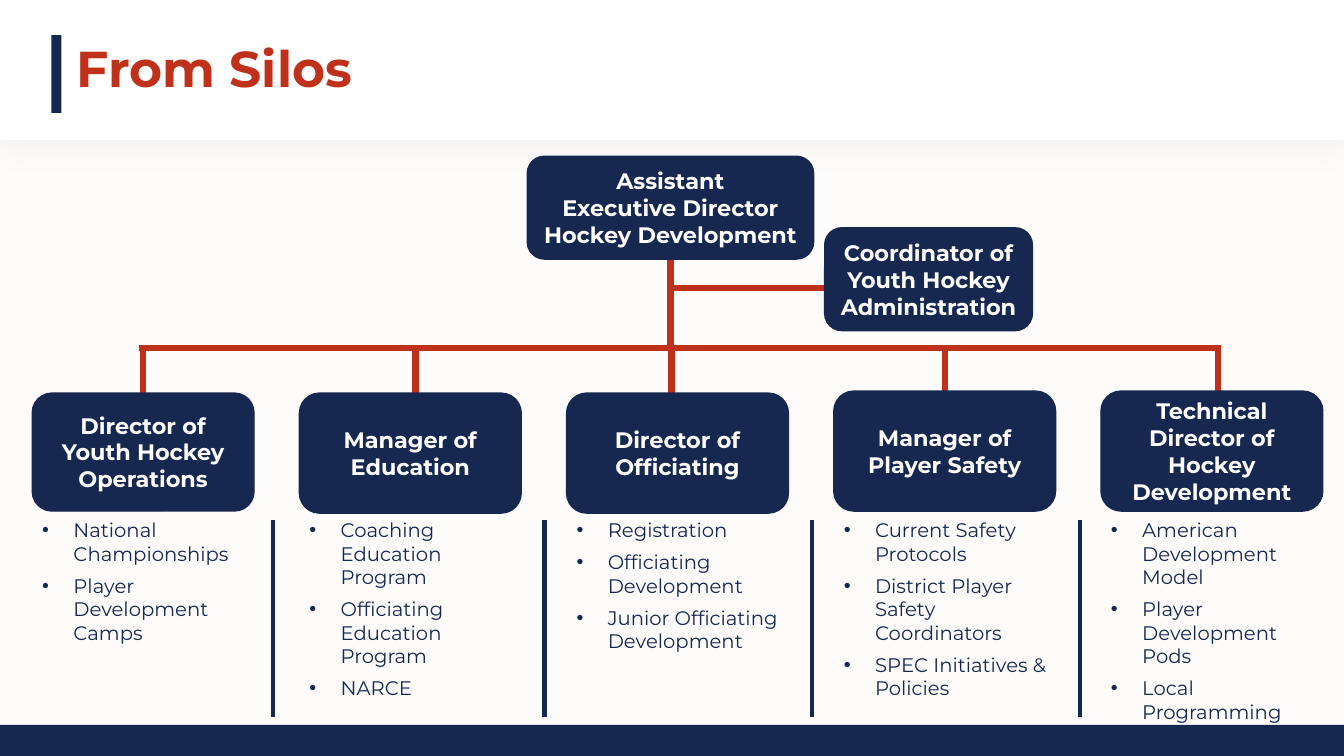
from lxml.etree import SubElement
from pptx import Presentation
from pptx.dml.color import RGBColor
from pptx.enum.shapes import MSO_CONNECTOR, MSO_SHAPE
from pptx.enum.text import MSO_ANCHOR, PP_ALIGN
from pptx.oxml import parse_xml
from pptx.oxml.ns import nsdecls, qn
from pptx.util import Inches, Pt

NAVY, RED, WHITE, CREAM = "162750", "BF311A", "FFFFFF", "FDFCFB"
SLIDE_WIDTH, SLIDE_HEIGHT = 13.33, 7.5

# Grid of the five departments
FIRST_LEFT, COLUMN_STEP, COLUMN_WIDTH = 0.32, 2.65, 2.2
LIST_TOP = 5.09
BUS_TOP = 3.45
TRUNK_X = 6.66

# Box top, box height, x of the drop line, title paragraphs, list width, list height, list
departments = [
    (3.9, 1.17, 1.41, ["Director of", "Youth Hockey", "Operations"], 2.2, 1.36,
     ["National Championships", "Player Development Camps"]),
    (3.9, 1.19, 4.12, ["Manager of\nEducation"], 2.2, 1.92,
     ["Coaching Education Program", "Officiating Education Program", "NARCE"]),
    (3.9, 1.19, TRUNK_X, ["Director of", "Officiating"], 2.43, 1.45,
     ["Registration", "Officiating Development", "Junior Officiating Development"]),
    (3.88, 1.19, 9.36, ["Manager of", "Player Safety"], 2.31, 1.92,
     ["Current Safety Protocols", "District Player Safety Coordinators",
      "SPEC Initiatives & Policies"]),
    (3.88, 1.19, 12.08, ["Technical", "Director of\nHockey\nDevelopment"], 2.2, 2.15,
     ["American Development Model", "Player Development Pods", "Local Programming"]),
]


def color(hex_code):
    return RGBColor.from_string(hex_code)


def write_text(shape, paragraphs, size, hex_code, bold, inset_x, inset_y):
    """Fill a shape with paragraphs; a newline inside one is a line break."""
    frame = shape.text_frame
    frame.word_wrap = True
    frame.margin_left = frame.margin_right = Inches(inset_x)
    frame.margin_top = frame.margin_bottom = Inches(inset_y)
    for index, text in enumerate(paragraphs):
        paragraph = frame.add_paragraph() if index else frame.paragraphs[0]
        for line_index, line_text in enumerate(text.split("\n")):
            if line_index:
                paragraph.add_line_break()
            run = paragraph.add_run()
            run.text = line_text
            run.font.name = "Montserrat"
            run.font.size = Pt(size)
            run.font.bold = bold
            run.font.color.rgb = color(hex_code)
    return frame


presentation = Presentation()
presentation.slide_width = Inches(SLIDE_WIDTH)
presentation.slide_height = Inches(SLIDE_HEIGHT)
slide = presentation.slides.add_slide(presentation.slide_layouts[6])
slide.background.fill.solid()
slide.background.fill.fore_color.rgb = color(CREAM)
shapes = slide.shapes

# Header band, footer band and title accent
bands = []
for left, top, width, height, fill in [
    (0, 0, SLIDE_WIDTH, 1.39, WHITE),
    (0, 7.19, SLIDE_WIDTH, SLIDE_HEIGHT - 7.19, NAVY),
    (0.51, 0.35, 0.1, 0.77, NAVY),
]:
    band = shapes.add_shape(MSO_SHAPE.RECTANGLE, Inches(left), Inches(top),
                            Inches(width), Inches(height))
    band.shadow.inherit = False
    band.fill.solid()
    band.fill.fore_color.rgb = color(fill)
    band.line.fill.background()
    bands.append(band)

# Soft shadow below the header
header_effects = bands[0]._element.spPr.find(qn("a:effectLst"))
header_effects.append(parse_xml(
    f'<a:outerShdw {nsdecls("a")} blurRad="{Pt(26)}" dist="{Pt(2)}" dir="5400000" '
    'algn="t" rotWithShape="0"><a:srgbClr val="000000"><a:alpha val="5000"/>'
    '</a:srgbClr></a:outerShdw>'))

# Title
title = shapes.add_textbox(Inches(0.68), Inches(0.26), Inches(10.78), Inches(0.82))
title_frame = write_text(title, ["From Silos"], 36, RED, True, 0.08, 0.08)
title_frame.vertical_anchor = MSO_ANCHOR.MIDDLE

# Lines: drops, trunk, bus, coordinator branch, then column dividers
lines = [(drop_x, BUS_TOP, drop_x, box_top, RED, 4.5)
         for box_top, _, drop_x, *_ in departments]
lines += [
    (TRUNK_X, 2.57, TRUNK_X, BUS_TOP, RED, 4.5),
    (1.38, BUS_TOP, 12.11, BUS_TOP, RED, 4.5),
    (6.68, 2.86, 8.28, 2.86, RED, 4.5),
]
lines += [(x, 5.16, x, 7.11, NAVY, 3) for x in (2.71, 5.4, 8.05, 10.71)]
connectors = []
for start_x, start_y, end_x, end_y, hex_code, weight in lines:
    connector = shapes.add_connector(MSO_CONNECTOR.STRAIGHT, Inches(start_x), Inches(start_y),
                                     Inches(end_x), Inches(end_y))
    connector.line.color.rgb = color(hex_code)
    connector.line.width = Pt(weight)
    SubElement(connector._element.spPr, qn("a:effectLst"))
    connectors.append(connector)

# Boxes: the five departments, then the director and the coordinator
boxes = [(FIRST_LEFT + column * COLUMN_STEP, top, COLUMN_WIDTH, height, paragraphs)
         for column, (top, height, _, paragraphs, *_) in enumerate(departments)]
boxes += [
    (5.23, 1.55, 2.84, 1.02, ["Assistant", "Executive Director", "Hockey Development"]),
    (8.18, 2.26, 2.06, 1.02, ["Coordinator of Youth Hockey Administration"]),
]
box_shapes = []
for left, top, width, height, paragraphs in boxes:
    box = shapes.add_shape(MSO_SHAPE.ROUNDED_RECTANGLE, Inches(left), Inches(top),
                           Inches(width), Inches(height))
    box.shadow.inherit = False
    box.fill.solid()
    box.fill.fore_color.rgb = color(NAVY)
    box.line.color.rgb = color(NAVY)
    box.line.width = Pt(1)
    frame = write_text(box, paragraphs, 16, WHITE, True, 0.06, 0.06)
    frame.vertical_anchor = MSO_ANCHOR.MIDDLE
    for paragraph in frame.paragraphs:
        paragraph.alignment = PP_ALIGN.CENTER
    box_shapes.append(box)

# Join the lines that meet the middle of a box side
for column in (0, 3):
    connectors[column].begin_x = box_shapes[column].left + box_shapes[column].width // 2
    connectors[column].end_connect(box_shapes[column], 0)
trunk, director = connectors[5], box_shapes[5]
trunk.begin_connect(director, 2)
trunk.end_x = trunk.begin_x

# Bulleted lists below the departments
for column, (*_, width, height, items) in enumerate(departments):
    list_box = shapes.add_textbox(Inches(FIRST_LEFT + column * COLUMN_STEP), Inches(LIST_TOP),
                                  Inches(width), Inches(height))
    frame = write_text(list_box, items, 14, NAVY, False, 0.1, 0.05)
    for paragraph in frame.paragraphs:
        paragraph.space_after = Pt(6)
        properties = paragraph._p.get_or_add_pPr()
        properties.set("marL", str(Inches(0.31)))
        properties.set("indent", str(-Inches(0.31)))
        SubElement(properties, qn("a:buFont"), typeface="Arial")
        SubElement(properties, qn("a:buChar"), char="•")

presentation.save("out.pptx")
